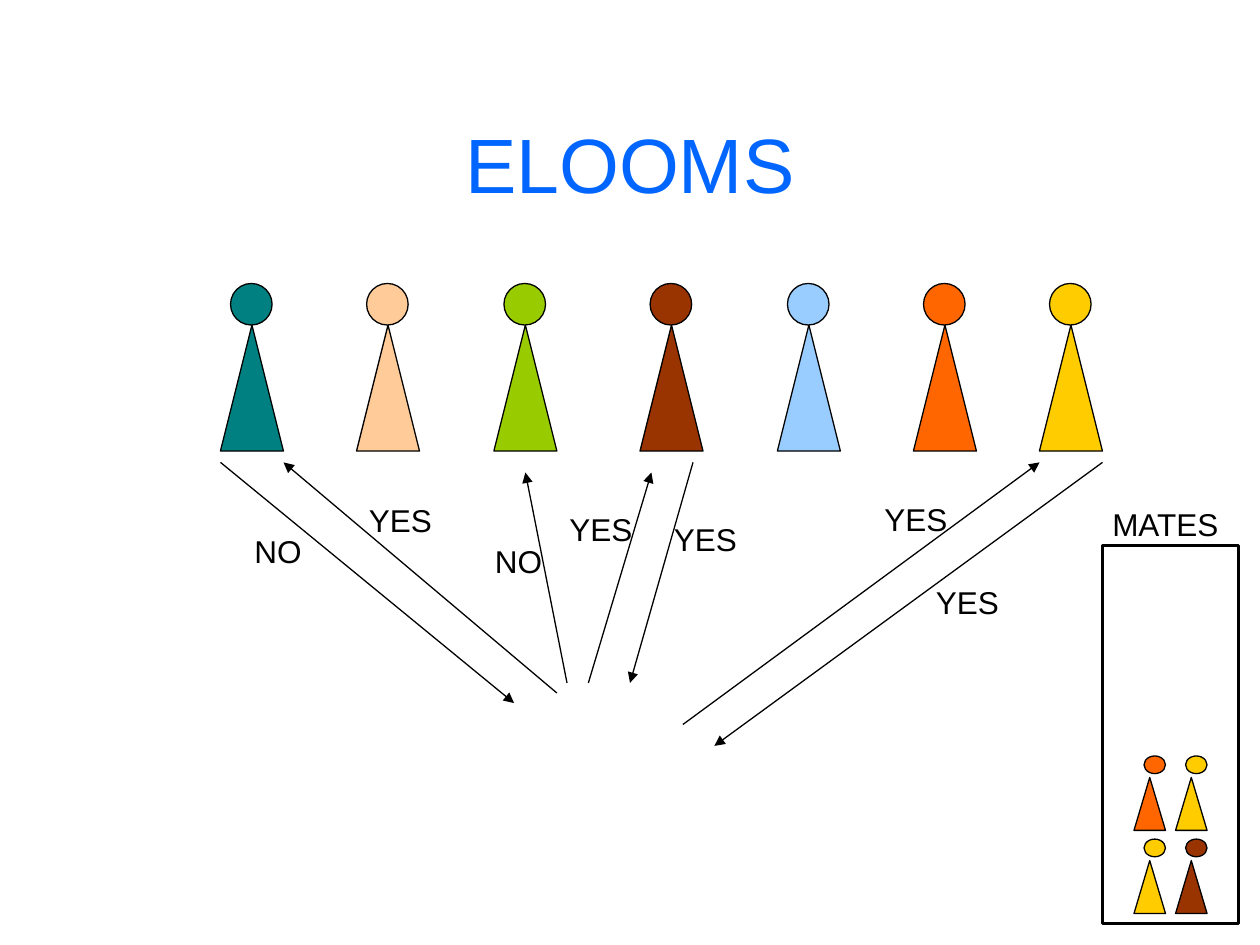
from dataclasses import dataclass

from lxml.etree import SubElement
from pptx import Presentation
from pptx.dml.color import RGBColor
from pptx.enum.shapes import MSO_CONNECTOR, MSO_SHAPE
from pptx.enum.text import MSO_ANCHOR, MSO_AUTO_SIZE, PP_ALIGN
from pptx.oxml.ns import qn
from pptx.util import Inches, Pt


@dataclass(frozen=True)
class Theme:
    font: str = "Arial"
    title_size: int = 44
    label_size: int = 18
    title: str = "0066FF"
    ink: str = "000000"
    thin: float = 0.75
    thick: float = 2
    teal: str = "008080"
    peach: str = "FFCC99"
    green: str = "99CC00"
    brown: str = "993300"
    blue: str = "99CCFF"
    orange: str = "FF6600"
    yellow: str = "FFCC00"


@dataclass(frozen=True)
class FigureSize:
    body_width: float
    body_height: float
    head_width: float
    head_height: float
    head_inset: float
    head_rise: float


THEME = Theme()
LARGE = FigureSize(0.5, 1, 0.33, 0.33, 0.08, 0.33)
SMALL = FigureSize(0.25, 0.42, 0.17, 0.14, 0.08, 0.17)

TITLE = "ELOOMS"
ROW_TOP = 2.58
ROW = [
    (1.75, THEME.teal), (2.83, THEME.peach), (3.92, THEME.green),
    (5.08, THEME.brown), (6.17, THEME.blue), (7.25, THEME.orange),
    (8.25, THEME.yellow),
]

MATES_BOX = (8.75, 4.33, 1.08, 3)
MATES_LEFT, MATES_TOP = 9, 6.17
MATES_STEP_X, MATES_STEP_Y = 0.33, 0.66
MATES = [(THEME.orange, THEME.yellow), (THEME.yellow, THEME.brown)]

# start, end
ARROWS = [
    ((1.75, 3.67), (4.08, 5.58)),
    ((4.42, 5.5), (2.25, 3.67)),
    ((4.5, 5.42), (4.17, 3.75)),
    ((4.67, 5.42), (5.17, 3.75)),
    ((5.5, 3.67), (5, 5.42)),
    ((5.42, 5.75), (8.25, 3.67)),
    ((8.75, 3.67), (5.67, 5.92)),
]

LABEL_WIDTHS = {"NO": 0.58, "YES": 0.7, "MATES": 1.06}
LABEL_HEIGHT = 0.4
LABELS = [
    ("NO", 1.92, 4.17), ("YES", 2.83, 3.93), ("NO", 3.83, 4.25),
    ("YES", 4.42, 4), ("YES", 5.25, 4.08), ("YES", 6.92, 3.92),
    ("YES", 7.33, 4.58), ("MATES", 8.73, 3.96),
]


def inches(*lengths):
    return [Inches(length) for length in lengths]


def add_span(para, text, size, color):
    span = para.add_run()
    span.text = text
    span.font.name = THEME.font
    span.font.size = Pt(size)
    span.font.color.rgb = RGBColor.from_string(color)


def add_outlined(slide, kind, place, fill=None, weight=THEME.thin):
    shape = slide.shapes.add_shape(kind, *inches(*place))
    shape.shadow.inherit = False
    if fill:
        shape.fill.solid()
        shape.fill.fore_color.rgb = RGBColor.from_string(fill)
    else:
        shape.fill.background()
    shape.line.color.rgb = RGBColor.from_string(THEME.ink)
    shape.line.width = Pt(weight)


def add_figure(slide, left, top, size, color):
    """Draw a person as a triangular body, placed at left and top, with a round head."""
    body = (left, top, size.body_width, size.body_height)
    head = (left + size.head_inset, top - size.head_rise,
            size.head_width, size.head_height)
    add_outlined(slide, MSO_SHAPE.ISOSCELES_TRIANGLE, body, color)
    add_outlined(slide, MSO_SHAPE.OVAL, head, color)


def add_arrow(slide, start, end):
    arrow = slide.shapes.add_connector(MSO_CONNECTOR.STRAIGHT, *inches(*start, *end))
    arrow.line.color.rgb = RGBColor.from_string(THEME.ink)
    arrow.line.width = Pt(THEME.thin)
    properties = arrow.element.spPr
    SubElement(properties.find(qn("a:ln")), qn("a:tailEnd"), type="triangle")
    SubElement(properties, qn("a:effectLst"))


def add_label(slide, text, left, top):
    box = slide.shapes.add_textbox(
        *inches(left, top, LABEL_WIDTHS[text], LABEL_HEIGHT))
    frame = box.text_frame
    frame.word_wrap = False
    frame.auto_size = MSO_AUTO_SIZE.SHAPE_TO_FIT_TEXT
    add_span(frame.paragraphs[0], text, THEME.label_size, THEME.ink)


def set_title(slide):
    title = slide.shapes.title
    title.left, title.top, title.width, title.height = inches(0.75, 0.67, 8.5, 1.25)
    title.text_frame.vertical_anchor = MSO_ANCHOR.MIDDLE
    para = title.text_frame.paragraphs[0]
    para.alignment = PP_ALIGN.CENTER
    add_span(para, TITLE, THEME.title_size, THEME.title)


def main():
    deck = Presentation()
    deck.slide_width, deck.slide_height = inches(10, 7.5)
    slide = deck.slides.add_slide(deck.slide_layouts.get_by_name("Title Only"))
    set_title(slide)
    for left, color in ROW:
        add_figure(slide, left, ROW_TOP, LARGE, color)
    for start, end in ARROWS:
        add_arrow(slide, start, end)
    add_outlined(slide, MSO_SHAPE.RECTANGLE, MATES_BOX, weight=THEME.thick)
    for row, pair in enumerate(MATES):
        for column, color in enumerate(pair):
            add_figure(slide, MATES_LEFT + column * MATES_STEP_X,
                       MATES_TOP + row * MATES_STEP_Y, SMALL, color)
    for text, left, top in LABELS:
        add_label(slide, text, left, top)
    deck.save("out.pptx")


if __name__ == "__main__":
    main()
